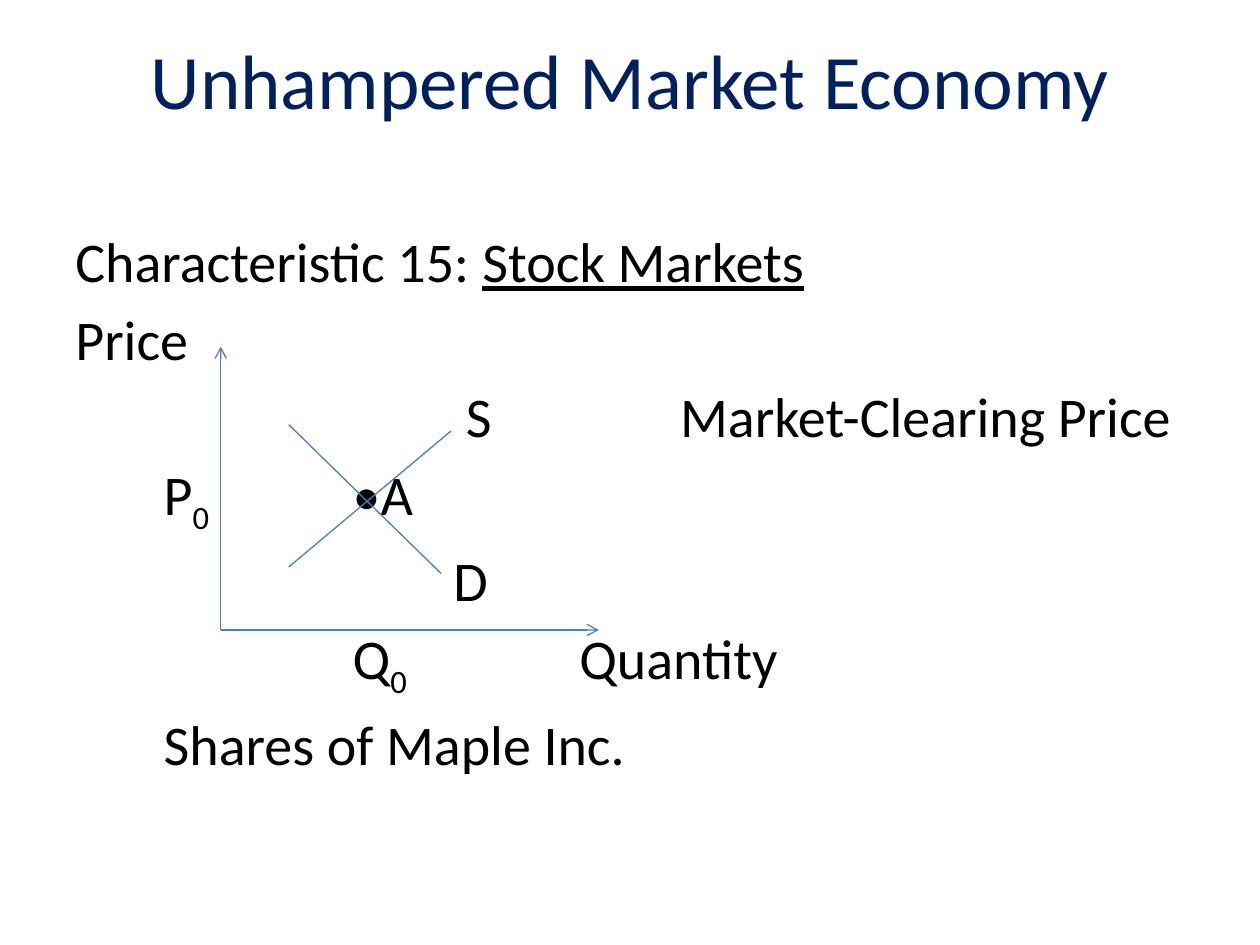
"""Build the stock market supply and demand slide."""
import pptx
import pptx.dml.color
import pptx.enum.shapes
import pptx.enum.text
import pptx.oxml.ns
import pptx.util
from lxml import etree
from pptx.util import Cm, Pt

NAVY = pptx.dml.color.RGBColor(0x00, 0x20, 0x60)
BLACK = pptx.dml.color.RGBColor(0x00, 0x00, 0x00)
BLUE = pptx.dml.color.RGBColor(0x4B, 0x7E, 0xBC)
FONT = "Calibri"
ORIGIN = (4.45, 12.7)

BODY_LINES = [
    ([], [("Characteristic 15: ", None), ("Stock Markets", "underline")]),
    ([], [("Price", None)]),
    ([7.87, 12.19], [("\tS\tMarket-Clearing Price", None)]),
    ([1.78, 5.59], [("\tP", None), ("0", "subscript"), ("\t•A", None)]),
    ([7.62], [("\tD", None)]),
    ([5.59, 10.16], [("\tQ", None), ("0", "subscript"), ("\tQuantity", None)]),
    ([1.78], [("\tShares of Maple Inc.", None)]),
]

AXES = [(ORIGIN, (4.45, 6.99)), (ORIGIN, (12.07, 12.7))]
CURVES = [((5.82, 8.56), (8.89, 11.56)), ((5.82, 11.43), (9.09, 8.69))]


def add_element(parent, tag, **attributes):
    """Append a DrawingML element to a parent."""
    return etree.SubElement(parent, pptx.oxml.ns.qn(tag), attributes)


def add_box(page, left, top, width, height):
    """Add a wrapping text box and return its text frame."""
    frame = page.shapes.add_textbox(Cm(left), Cm(top), Cm(width), Cm(height)).text_frame
    frame.word_wrap = True
    return frame


def style_paragraph(para, size, color):
    """Set the font of a whole paragraph."""
    para.font.name = FONT
    para.font.size = Pt(size)
    para.font.color.rgb = color


def add_title(page, text):
    """Add the centred slide title."""
    frame = add_box(page, 0, 0, 25.4, 3.18)
    frame.vertical_anchor = pptx.enum.text.MSO_ANCHOR.MIDDLE
    para = frame.paragraphs[0]
    para.text = text
    para.alignment = pptx.enum.text.PP_ALIGN.CENTER
    style_paragraph(para, 44, NAVY)


def set_tabs(para, stops):
    """Give a paragraph left tab stops."""
    tabs = add_element(para._p.get_or_add_pPr(), "a:tabLst")
    for stop in stops:
        add_element(tabs, "a:tab", pos=str(int(Cm(stop))), algn="l")


def add_body(page, lines):
    """Add the text lines with the diagram labels placed by tab stops."""
    frame = add_box(page, 1.27, 4.45, 22.86, 14.6)
    for index, (stops, pieces) in enumerate(lines):
        para = frame.add_paragraph() if index else frame.paragraphs[0]
        para.space_before = Pt(5.8 if index else 0)
        if stops:
            set_tabs(para, stops)
        style_paragraph(para, 32, BLACK)
        for text, effect in pieces:
            span = para.add_run()
            span.text = text
            if effect == "underline":
                span.font.underline = True
            elif effect == "subscript":
                span._r.get_or_add_rPr().set("baseline", "-25000")


def add_line(page, start, end, arrow=False):
    """Add a thin blue line, with an arrowhead at its end if asked."""
    line = page.shapes.add_connector(
        pptx.enum.shapes.MSO_CONNECTOR.STRAIGHT, *map(Cm, start + end)
    )
    line.line.color.rgb = BLUE
    line.line.width = Pt(0.75)
    if arrow:
        add_element(line.line._get_or_add_ln(), "a:tailEnd", type="arrow")
    add_element(line._element.spPr, "a:effectLst")


def main():
    """Build and save the deck."""
    deck = pptx.Presentation()
    deck.slide_width, deck.slide_height = Cm(25.4), Cm(19.05)
    page = deck.slides.add_slide(deck.slide_layouts[6])
    add_title(page, "Unhampered Market Economy")
    add_body(page, BODY_LINES)
    for start, end in AXES:
        add_line(page, start, end, arrow=True)
    for start, end in CURVES:
        add_line(page, start, end)
    deck.save("out.pptx")


if __name__ == "__main__":
    main()
